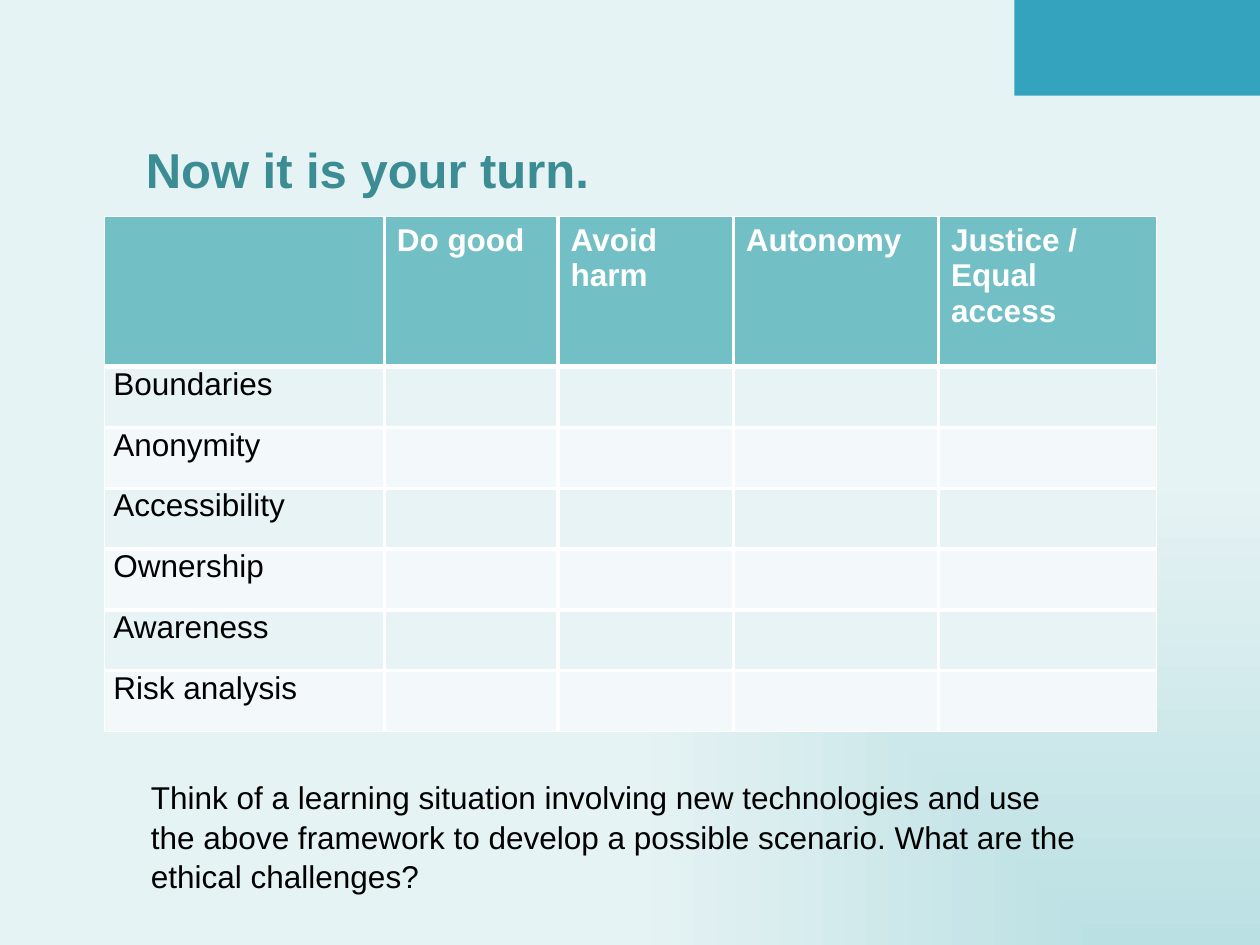
"""Build the slide with the ethics framework table and its task."""
from lxml import etree
from pptx import Presentation
from pptx.dml.color import RGBColor
from pptx.enum.shapes import MSO_SHAPE
from pptx.enum.text import MSO_AUTO_SIZE
from pptx.oxml.ns import qn
from pptx.util import Inches, Pt

RECT = MSO_SHAPE.RECTANGLE
GROW = MSO_AUTO_SIZE.SHAPE_TO_FIT_TEXT
WHITE, BLACK, HEAD, BANDS = "FFFFFF", "000000", "72BFC5", ("F3F9FA", "E7F3F4")
HEADERS = ["", "Do good", "Avoid harm", "Autonomy", "Justice / Equal access"]
ROWS = ["Boundaries", "Anonymity", "Accessibility", "Ownership", "Awareness", "Risk analysis"]
COLS = [22.2, 13.8, 13.9, 16.3, 17.3]
rgb = RGBColor.from_string


def write(tf, text, size=18, color=BLACK, bold=False, spacing=None):
    p = tf.paragraphs[0]
    p.line_spacing = spacing
    p.font.size = Pt(size)
    if text:
        r = p.add_run()
        r.text = text
        r.font.name, r.font.size, r.font.bold = "Arial", Pt(size), bold
        r.font.color.rgb = rgb(color)


def border(cell, side, width):
    ln = etree.SubElement(cell._tc.get_or_add_tcPr(), qn("a:ln" + side), w=str(Pt(width)))
    fill = etree.SubElement(ln, qn("a:solidFill"))
    etree.SubElement(fill, qn("a:srgbClr"), val=WHITE)


prs = Presentation()
prs.slide_width, prs.slide_height = Inches(10), Inches(7.5)
u = prs.slide_width / 100
s = prs.slides.add_slide(prs.slide_layouts[6])

fill = s.background.fill
fill.gradient()
for stop, color in zip(fill.gradient_stops, ("BBE0E3", "E6F3F4")):
    stop.color.rgb = rgb(color)
lin = s._element.find(".//" + qn("a:lin"))
radial = etree.Element(qn("a:path"), path="rect")
etree.SubElement(radial, qn("a:fillToRect"), l="100000", t="100000")
lin.getparent().replace(lin, radial)

sp = s.shapes.add_shape(RECT, int(80.5 * u), 0, int(19.5 * u), int(7.6 * u))
sp.shadow.inherit = False
sp.fill.solid()
sp.fill.fore_color.rgb = rgb("34A4BE")
sp.line.fill.background()

n_rows, n_cols = len(ROWS) + 1, len(COLS)
table = s.shapes.add_table(n_rows, n_cols, int(8.3 * u), int(17.2 * u),
                           int(sum(COLS) * u), int(40.9 * u)).table
for col, width in zip(table.columns, COLS):
    col.width = int(width * u)
v_lines = [1] + [2.25] * (n_cols - 1) + [1]
h_lines = [1, 3] + [2.25] * (n_rows - 2) + [1]
for i, row in enumerate(table.rows):
    row.height = int((4.83 if i else 11.9) * u)
    for j, cell in enumerate(row.cells):
        for side, width in zip("LRTB", v_lines[j:j + 2] + h_lines[i:i + 2]):
            border(cell, side, width)
        cell.fill.solid()
        cell.fill.fore_color.rgb = rgb(BANDS[i % 2] if i else HEAD)
        if i == 0:
            write(cell.text_frame, HEADERS[j], color=WHITE, bold=True)
        else:
            write(cell.text_frame, "" if j else ROWS[i - 1])
            if j == 0:
                cell.margin_left = cell.margin_right = int(0.7 * u)
                cell.margin_top = cell.margin_bottom = 0

TASK = ("Think of a learning situation involving new technologies and use the above "
        "framework to develop a possible scenario. What are the ethical challenges?")
TEXTS = [
    (10.6, 10.6, 37.6, 5.7, False, "Now it is your turn.", dict(size=28, color="3C8C93", bold=True)),
    (11, 61.1, 75.6, 10.1, True, TASK, dict(spacing=1.05)),
]
for x, y, w, h, wrap, text, style in TEXTS:
    tf = s.shapes.add_textbox(*(int(v * u) for v in (x, y, w, h))).text_frame
    tf.word_wrap, tf.auto_size = wrap, GROW
    write(tf, text, **style)

prs.save("out.pptx")
